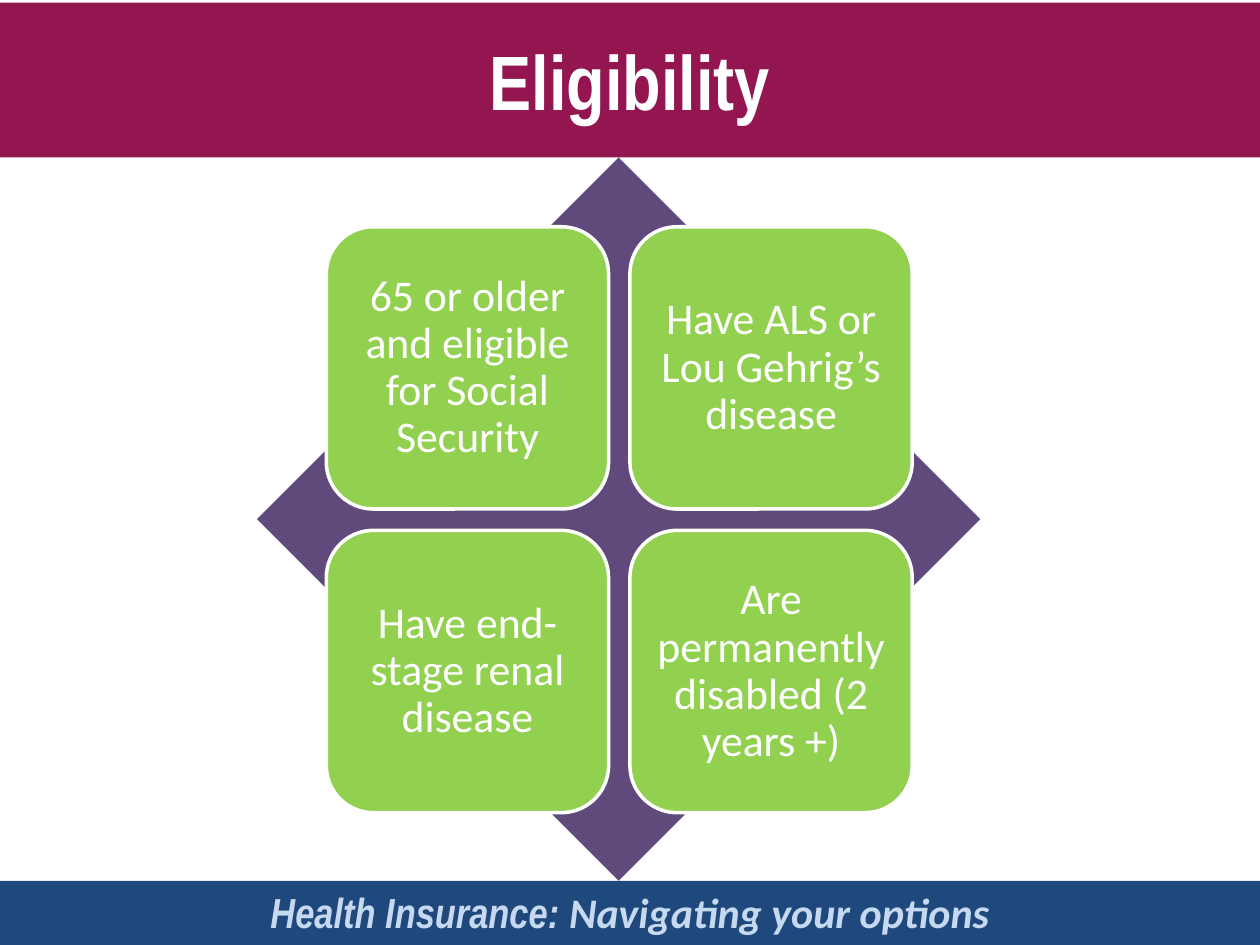
from pptx import Presentation
from pptx.dml.color import RGBColor
from pptx.enum.shapes import MSO_SHAPE
from pptx.enum.text import MSO_ANCHOR, PP_ALIGN
from pptx.util import Inches, Pt

DIAMOND, ROUNDED = MSO_SHAPE.DIAMOND, MSO_SHAPE.ROUNDED_RECTANGLE
RECT = MSO_SHAPE.RECTANGLE
TOP, MIDDLE = MSO_ANCHOR.TOP, MSO_ANCHOR.MIDDLE
CENTER = PP_ALIGN.CENTER

TITLE = "Eligibility"
CRITERIA = [
    "65 or older and eligible for Social Security",
    "Have ALS or Lou Gehrig’s disease",
    "Have end-stage renal disease",
    "Are permanently disabled (2 years +)",
]
FOOTER = [("Health Insurance: ", "Arial Narrow"),
          ("Navigating your options", "Calibri")]

MAROON, NAVY, PURPLE, GREEN = "941651", "1F497D", "604A7B", "92D050"
WHITE, PALE_BLUE = "FFFFFF", "C6D9F1"

DIAMOND_LEFT, DIAMOND_TOP, DIAMOND_SIZE = 2.04, 1.25, 5.74
CARD_SIZE, CARD_STEP, CARD_INSET, COLUMNS = 2.24, 2.41, 0.55, 2


def set_fill(sp, color):
    sp.fill.solid()
    sp.fill.fore_color.rgb = RGBColor.from_string(color)


def add_shape(slide, kind, left, top, width, height, color):
    sp = slide.shapes.add_shape(kind, Inches(left), Inches(top),
                                Inches(width), Inches(height))
    sp.shadow.inherit = False
    set_fill(sp, color)
    sp.line.fill.background()
    return sp


def write(sp, parts, size, color, anchor=MIDDLE, bold=False, italic=False):
    """Write (text, font) parts as one centred paragraph and return it."""
    tf = sp.text_frame
    tf.word_wrap = True
    tf.vertical_anchor = anchor
    p = tf.paragraphs[0]
    p.alignment = CENTER
    for text, font in parts:
        r = p.add_run()
        r.text = text
        r.font.name, r.font.size = font, Pt(size)
        r.font.bold, r.font.italic = bold, italic
        r.font.color.rgb = RGBColor.from_string(color)
    return p


def add_card(slide, index, text):
    row, col = divmod(index, COLUMNS)
    card = add_shape(slide, ROUNDED,
                     DIAMOND_LEFT + CARD_INSET + col * CARD_STEP,
                     DIAMOND_TOP + CARD_INSET + row * CARD_STEP,
                     CARD_SIZE, CARD_SIZE, GREEN)
    card.line.color.rgb = RGBColor.from_string(WHITE)
    card.line.width = Pt(2)
    tf = card.text_frame
    tf.margin_left = tf.margin_right = Inches(0.1)
    tf.margin_top = tf.margin_bottom = Inches(0.1)
    write(card, [(text, "Calibri")], 25, WHITE).line_spacing = 0.9


def main():
    prs = Presentation()
    prs.slide_width, prs.slide_height = Inches(10), Inches(7.5)
    slide = prs.slides.add_slide(prs.slide_layouts[5])

    title = slide.shapes.title
    title.left, title.top = Inches(0), Inches(0.02)
    title.width, title.height = Inches(10), Inches(1.23)
    set_fill(title, MAROON)
    write(title, [(TITLE, "Arial Narrow")], 44, WHITE, bold=True)

    footer = add_shape(slide, RECT, 0, 6.99, 10, 0.51, NAVY)
    write(footer, FOOTER, 24, PALE_BLUE, TOP, bold=True, italic=True)

    add_shape(slide, DIAMOND, DIAMOND_LEFT, DIAMOND_TOP,
              DIAMOND_SIZE, DIAMOND_SIZE, PURPLE)
    for index, text in enumerate(CRITERIA):
        add_card(slide, index, text)

    prs.save("out.pptx")


if __name__ == "__main__":
    main()
